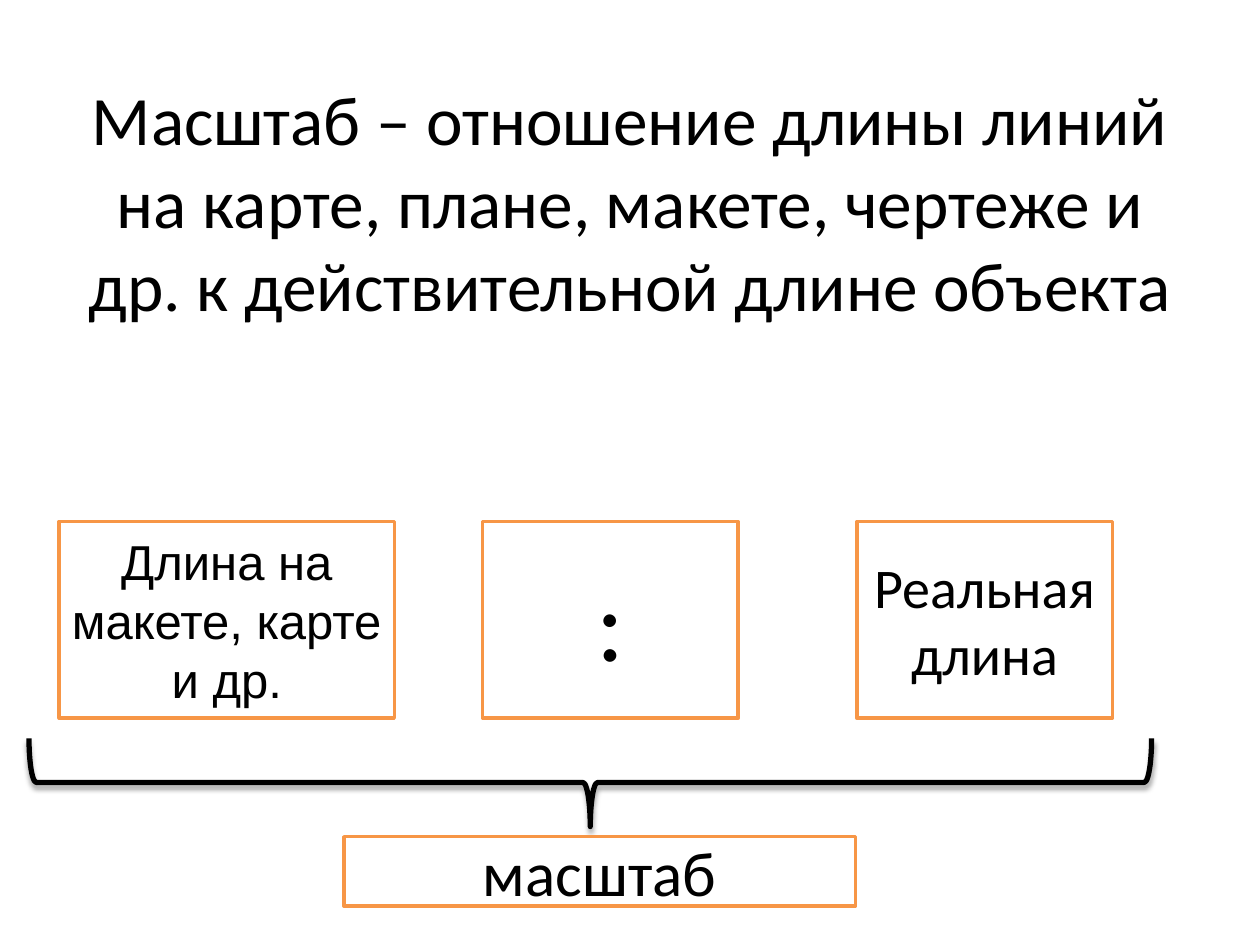
from dataclasses import dataclass

from lxml.etree import SubElement
from pptx import Presentation
from pptx.dml.color import RGBColor
from pptx.enum.shapes import MSO_SHAPE
from pptx.enum.text import MSO_ANCHOR, PP_ALIGN
from pptx.oxml.ns import qn
from pptx.util import Inches, Pt


@dataclass(frozen=True)
class Theme:
    """Colours, fonts and type sizes of the slide."""
    ink: RGBColor = RGBColor(0, 0, 0)
    paper: RGBColor = RGBColor(255, 255, 255)
    accent: RGBColor = RGBColor(0xF7, 0x96, 0x46)
    font: str = "Calibri"
    plain_font: str = "Arial"
    title: float = 39.6
    model: float = 28
    sign: float = 60
    real: float = 32
    scale: float = 36


THEME = Theme()


def place(shape, left, top, width, height):
    """Set the position and size of a shape in inches."""
    shape.left, shape.top = Inches(left), Inches(top)
    shape.width, shape.height = Inches(width), Inches(height)


def write(shape, text, size, font=THEME.font):
    """Put centred text in a shape."""
    frame = shape.text_frame
    frame.text = text
    frame.word_wrap = True
    frame.vertical_anchor = MSO_ANCHOR.MIDDLE
    frame.margin_left = frame.margin_right = Inches(0.09)
    para = frame.paragraphs[0]
    para.alignment = PP_ALIGN.CENTER
    for span in para.runs:
        span.font.size = Pt(size)
        span.font.name = font
        span.font.color.rgb = THEME.ink


def add_title(page, text):
    """Fill and place the title placeholder."""
    title = page.shapes.title
    place(title, 0.5, 0.3, 9, 2.59)
    write(title, text, THEME.title)


def add_box(page, bounds, text, size, font=THEME.font):
    """Add an outlined box with a label."""
    box = page.shapes.add_shape(MSO_SHAPE.RECTANGLE, *map(Inches, bounds))
    box.shadow.inherit = False
    box.fill.solid()
    box.fill.fore_color.rgb = THEME.paper
    box.line.color.rgb = THEME.accent
    box.line.width = Pt(2)
    write(box, text, size, font)


def add_shadow(shape):
    """Give a shape a soft shadow straight below it."""
    shape.shadow.inherit = False
    effects = shape._element.spPr.find(qn("a:effectLst"))
    shadow = SubElement(effects, qn("a:outerShdw"), blurRad=str(Pt(3.1)),
                        dist=str(Pt(1.8)), dir="5400000", rotWithShape="0")
    colour = SubElement(shadow, qn("a:srgbClr"), val=str(THEME.ink))
    SubElement(colour, qn("a:alpha"), val="35000")


def add_brace(page, left, top, width, height):
    """Add a brace that opens upwards and fills the given bounds."""
    brace = page.shapes.add_shape(MSO_SHAPE.LEFT_BRACE, 0, 0, 0, 0)
    place(brace, left + (width - height) / 2, top + (height - width) / 2,
          height, width)
    brace.rotation = 270
    brace.fill.background()
    brace.line.color.rgb = THEME.ink
    brace.line.width = Pt(3)
    add_shadow(brace)


def main():
    """Build the slide and save the deck."""
    deck = Presentation()
    deck.slide_width, deck.slide_height = Inches(10), Inches(7.5)
    page = deck.slides.add_slide(deck.slide_layouts[5])
    add_title(page, "Масштаб – отношение длины линий на карте, плане, макете, "
                    "чертеже и др. к действительной длине объекта")
    ratio = [
        (0.47, 2.66, "Длина на макете, карте и др.", THEME.model, THEME.plain_font),
        (3.83, 2.03, ":", THEME.sign, THEME.font),
        (6.8, 2.03, "Реальная длина", THEME.real, THEME.font),
    ]
    for left, width, text, size, font in ratio:
        add_box(page, (left, 4.14, width, 1.56), text, size, font)
    add_brace(page, 0.23, 5.86, 8.91, 0.7)
    add_box(page, (2.73, 6.64, 4.06, 0.55), "масштаб", THEME.scale)
    deck.save("out.pptx")


if __name__ == "__main__":
    main()
